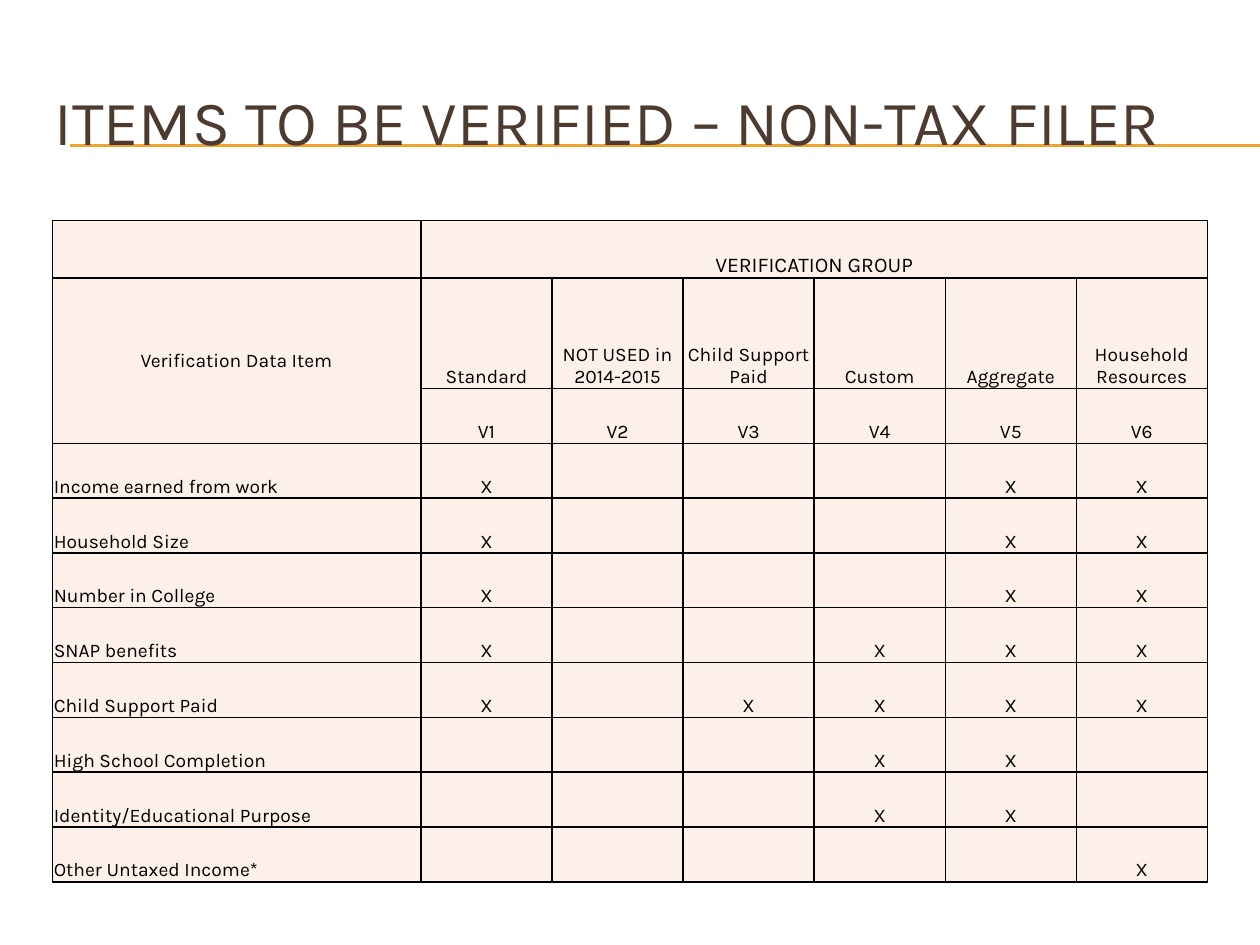
from dataclasses import dataclass
from typing import NamedTuple

from lxml.etree import SubElement
from pptx import Presentation
from pptx.dml.color import RGBColor
from pptx.enum.shapes import MSO_CONNECTOR
from pptx.enum.text import MSO_ANCHOR, PP_ALIGN
from pptx.oxml.ns import qn
from pptx.util import Pt


@dataclass(frozen=True)
class Theme:
    font: str = "Karla"
    title_color: str = "4E3B30"
    body_color: str = "000000"
    rule_color: str = "F0A22E"
    cell_color: str = "FCF0E8"
    border_color: str = "000000"
    title_size: float = 36
    group_size: float = 12
    body_size: float = 11
    rule_width: float = 0.75
    border_width: float = 1


class Group(NamedTuple):
    name: str
    code: str


class Item(NamedTuple):
    name: str
    groups: str


class Rule(NamedTuple):
    left: float
    right: float
    y: float


THEME = Theme()
SLIDE_WIDTH, SLIDE_HEIGHT = 720, 540
RULES = [Rule(40.3, SLIDE_WIDTH, 82.8), Rule(40.3, SLIDE_WIDTH, 83.4)]
GROUPS = [
    Group("Standard", "V1"),
    Group("NOT USED in 2014-2015", "V2"),
    Group("Child Support Paid", "V3"),
    Group("Custom", "V4"),
    Group("Aggregate", "V5"),
    Group("Household Resources", "V6"),
]
ITEMS = [
    Item("Income earned from work", "V1 V5 V6"),
    Item("Household Size", "V1 V5 V6"),
    Item("Number in College", "V1 V5 V6"),
    Item("SNAP benefits", "V1 V4 V5 V6"),
    Item("Child Support Paid", "V1 V3 V4 V5 V6"),
    Item("High School Completion", "V4 V5"),
    Item("Identity/Educational Purpose", "V4 V5"),
    Item("Other Untaxed Income*", "V6"),
]
COLUMN_WIDTHS = [210.6] + [74.9] * len(GROUPS)
ROW_HEIGHTS = [33, 63] + [31.33] * (len(ITEMS) + 1)


def write(frame, text: str, *, size: float = THEME.body_size,
          color: str = THEME.body_color, align=PP_ALIGN.CENTER) -> None:
    paragraph = frame.paragraphs[0]
    paragraph.alignment = align
    run = paragraph.add_run()
    run.text = text
    run.font.name = THEME.font
    run.font.size = Pt(size)
    run.font.color.rgb = RGBColor.from_string(color)


def draw_rule(slide, rule: Rule) -> None:
    line = slide.shapes.add_connector(
        MSO_CONNECTOR.STRAIGHT, Pt(rule.left), Pt(rule.y), Pt(rule.right), Pt(rule.y))
    line.line.color.rgb = RGBColor.from_string(THEME.rule_color)
    line.line.width = Pt(THEME.rule_width)
    SubElement(line._element.spPr, qn("a:effectLst"))


def draw_title(slide, text: str) -> None:
    title = slide.shapes.add_textbox(Pt(24), Pt(36), Pt(684), Pt(66))
    title.text_frame.word_wrap = True
    title.text_frame.vertical_anchor = MSO_ANCHOR.MIDDLE
    write(title.text_frame, text, size=THEME.title_size,
          color=THEME.title_color, align=PP_ALIGN.LEFT)


def style_cell(cell) -> None:
    properties = cell._tc.get_or_add_tcPr()
    for side in ("a:lnL", "a:lnR", "a:lnT", "a:lnB"):
        border = SubElement(properties, qn(side), w=str(Pt(THEME.border_width)))
        fill = SubElement(border, qn("a:solidFill"))
        SubElement(fill, qn("a:srgbClr"), val=THEME.border_color)
    cell.fill.solid()
    cell.fill.fore_color.rgb = RGBColor.from_string(THEME.cell_color)
    cell.margin_left = cell.margin_right = cell.margin_top = Pt(0.75)
    cell.margin_bottom = Pt(0)
    cell.vertical_anchor = MSO_ANCHOR.BOTTOM


def draw_verification_table(slide) -> None:
    grid = slide.shapes.add_table(
        len(ROW_HEIGHTS), len(COLUMN_WIDTHS), Pt(30), Pt(126),
        Pt(sum(COLUMN_WIDTHS)), Pt(sum(ROW_HEIGHTS))).table
    grid.first_row = grid.horz_banding = False
    for column, width in zip(grid.columns, COLUMN_WIDTHS):
        column.width = Pt(width)
    for row, height in zip(grid.rows, ROW_HEIGHTS):
        row.height = Pt(height)
    for cell in grid.iter_cells():
        style_cell(cell)

    group_heading = grid.cell(0, 1)
    group_heading.merge(grid.cell(0, len(GROUPS)))
    write(group_heading.text_frame, "VERIFICATION GROUP", size=THEME.group_size)

    item_heading = grid.cell(1, 0)
    item_heading.merge(grid.cell(2, 0))
    item_heading.vertical_anchor = MSO_ANCHOR.MIDDLE
    write(item_heading.text_frame, "Verification Data Item")

    for column, group in enumerate(GROUPS, start=1):
        write(grid.cell(1, column).text_frame, group.name)
        write(grid.cell(2, column).text_frame, group.code)

    for row, item in enumerate(ITEMS, start=3):
        write(grid.cell(row, 0).text_frame, item.name, align=PP_ALIGN.LEFT)
        for column, group in enumerate(GROUPS, start=1):
            if group.code in item.groups.split():
                write(grid.cell(row, column).text_frame, "X")


def main() -> None:
    presentation = Presentation()
    presentation.slide_width = Pt(SLIDE_WIDTH)
    presentation.slide_height = Pt(SLIDE_HEIGHT)
    slide = presentation.slides.add_slide(presentation.slide_layouts[6])
    for rule in RULES:
        draw_rule(slide, rule)
    draw_title(slide, "ITEMS TO BE VERIFIED – NON-TAX FILER")
    draw_verification_table(slide)
    presentation.save("out.pptx")


if __name__ == "__main__":
    main()
